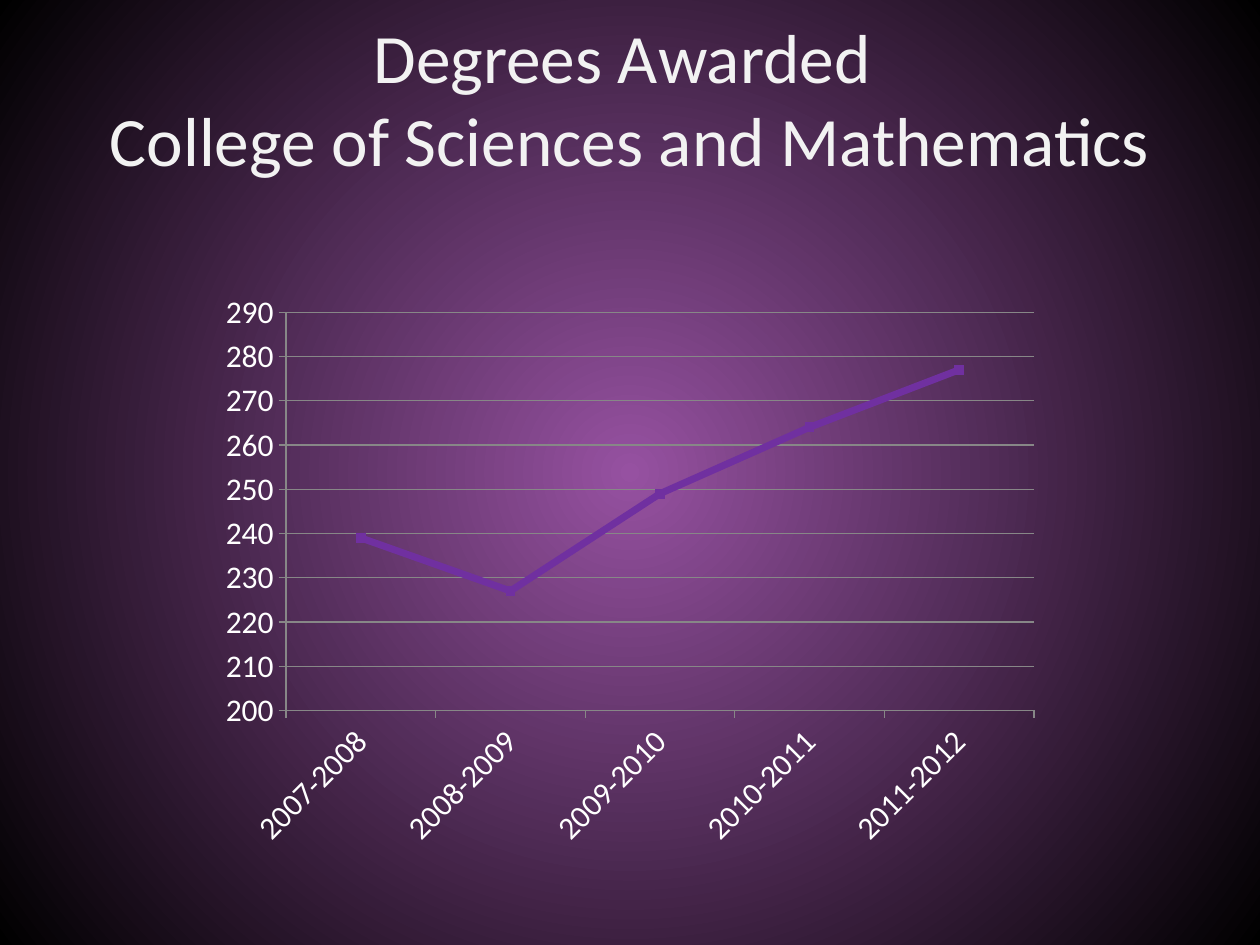
from dataclasses import dataclass

from lxml import etree
from pptx import Presentation
from pptx.chart.data import CategoryChartData
from pptx.dml.color import RGBColor as RGB
from pptx.enum.chart import XL_CHART_TYPE as ChartType
from pptx.enum.chart import XL_MARKER_STYLE as Marker
from pptx.enum.chart import XL_TICK_MARK as Tick
from pptx.enum.text import MSO_ANCHOR as Anchor
from pptx.enum.text import PP_ALIGN as Align
from pptx.oxml import parse_xml
from pptx.oxml.ns import nsdecls, qn
from pptx.util import Inches, Pt

FONT = "Calibri"
COLORS = {
    "glow": "9651A1",
    "edge": "000000",
    "title": "F2F2F2",
    "label": "FFFFFF",
    "grid": "878787",
    "line": "7030A0",
}


@dataclass
class Box:
    left: float
    top: float
    width: float
    height: float

    def lengths(self):
        return [Inches(v) for v in (self.left, self.top, self.width, self.height)]


@dataclass
class DegreeCount:
    year: str
    count: int


DEGREES = [DegreeCount(f"{y}-{y + 1}", n)
           for y, n in zip(range(2007, 2012), (239, 227, 249, 264, 277))]


def color(name: str) -> RGB:
    return RGB.from_string(COLORS[name])


def set_radial_background(slide) -> None:
    """Fade from the glow at the centre to the edge colour at the corners."""
    fill = slide.background.fill
    fill.gradient()
    for stop, name, pos in zip(fill.gradient_stops, ("glow", "edge"), (0, 1)):
        stop.color.rgb = color(name)
        stop.position = pos
    grad = slide._element.find(".//" + qn("a:gradFill"))
    grad.replace(grad.find(qn("a:lin")), parse_xml(
        f'<a:path {nsdecls("a")} path="circle">'
        '<a:fillToRect l="50000" t="50000" r="50000" b="50000"/></a:path>'))


def add_text(slide, box: Box, text: str, *, size: float, fill: str,
             align=Align.CENTER, anchor=Anchor.MIDDLE) -> None:
    tf = slide.shapes.add_textbox(*box.lengths()).text_frame
    tf.word_wrap = True
    tf.vertical_anchor = anchor
    p = tf.paragraphs[0]
    p.text = text
    p.alignment = align
    for r in p.runs:
        r.font.name = FONT
        r.font.size = Pt(size)
        r.font.color.rgb = color(fill)


def style_line(line, name: str, width: float) -> None:
    line.color.rgb = color(name)
    line.width = Pt(width)


def set_plot_area(chart, area: Box) -> None:
    """Fix the inner plot area, in fractions of the chart."""
    plot = chart._chartSpace.chart.plotArea
    for old in plot.findall(qn("c:layout")):
        plot.remove(old)
    layout = etree.Element(qn("c:layout"))
    manual = etree.SubElement(layout, qn("c:manualLayout"))
    settings = {"layoutTarget": "inner", "xMode": "edge", "yMode": "edge",
                "x": area.left, "y": area.top, "w": area.width, "h": area.height}
    for tag, value in settings.items():
        etree.SubElement(manual, qn(f"c:{tag}")).set("val", str(value))
    plot.insert(0, layout)


def add_degree_chart(slide, box: Box, degrees: list[DegreeCount]) -> None:
    data = CategoryChartData()
    data.categories = [d.year for d in degrees]
    data.add_series("Series 1", [d.count for d in degrees])
    chart = slide.shapes.add_chart(ChartType.LINE_MARKERS, *box.lengths(), data).chart
    chart.has_legend = False
    chart.has_title = False
    chart.font.name = FONT
    chart.font.size = Pt(18)
    chart.font.color.rgb = color("label")
    set_plot_area(chart, Box(0.09, 0.05, 0.89, 0.69))

    years, counts = chart.category_axis, chart.value_axis
    for axis in (years, counts):
        axis.major_tick_mark = Tick.OUTSIDE
        axis.minor_tick_mark = Tick.NONE
        style_line(axis.format.line, "grid", 0.75)
    years.tick_labels.font.size = Pt(18)
    years._element.find(qn("c:txPr")).find(qn("a:bodyPr")).set("rot", "-2700000")
    counts.minimum_scale, counts.maximum_scale, counts.major_unit = 200, 290, 10
    counts.has_major_gridlines = True
    style_line(counts.major_gridlines.format.line, "grid", 0.75)

    chart.plots[0].vary_by_categories = False
    series = chart.plots[0].series[0]
    series.smooth = False
    style_line(series.format.line, "line", 4)
    series.marker.style = Marker.SQUARE
    series.marker.size = 5
    series.marker.format.fill.solid()
    series.marker.format.fill.fore_color.rgb = color("line")
    style_line(series.marker.format.line, "line", 0.75)


def main() -> None:
    prs = Presentation()
    prs.slide_width, prs.slide_height = Inches(10), Inches(7.5)
    slide = prs.slides.add_slide(prs.slide_layouts[6])
    set_radial_background(slide)
    add_text(slide, Box(0, 0, 10, 1.55),
             "Degrees Awarded \vCollege of Sciences and Mathematics",
             size=39.6, fill="title")
    add_degree_chart(slide, Box(1.67, 2.25, 6.67, 4.58), DEGREES)
    prs.save("out.pptx")


if __name__ == "__main__":
    main()
